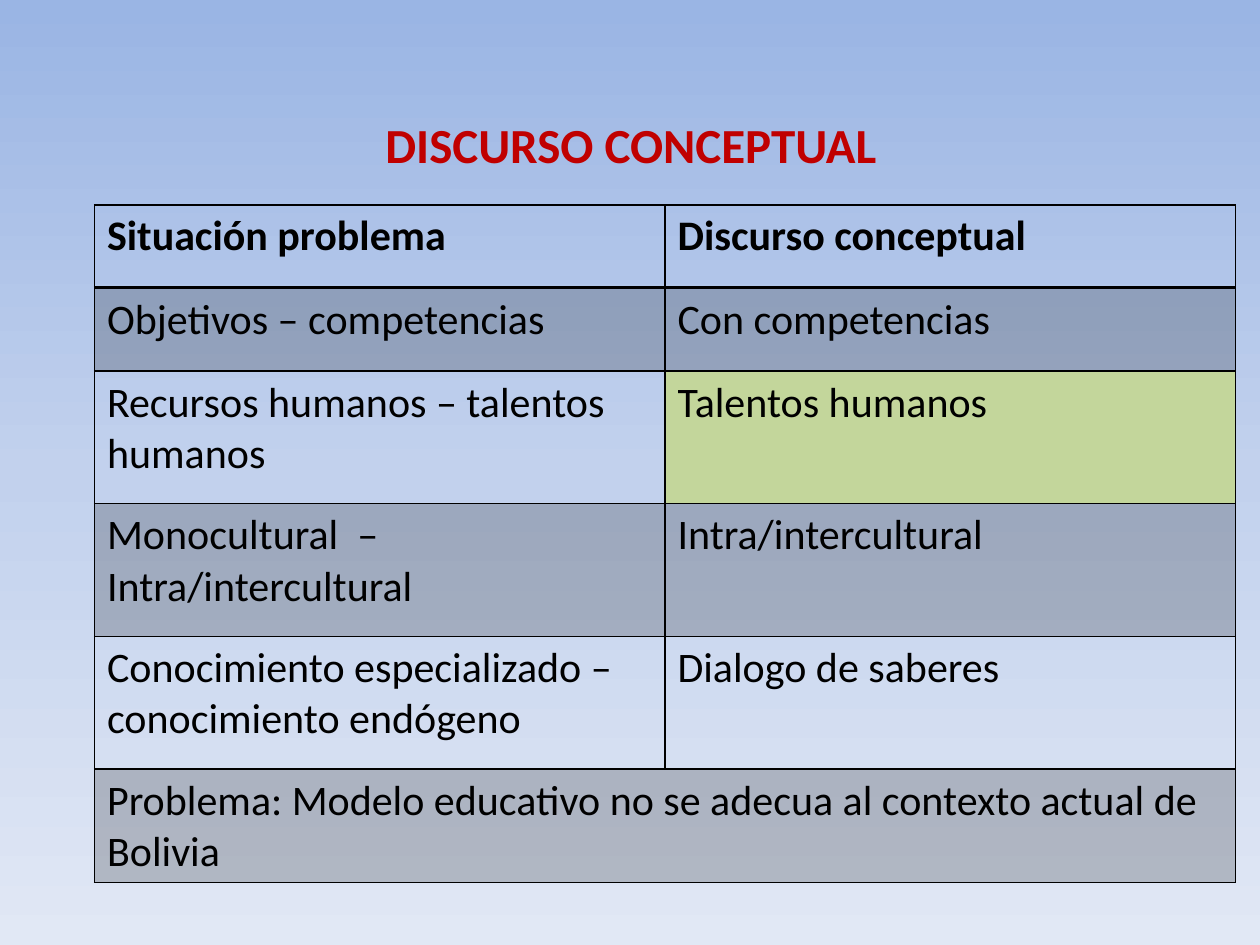
import copy

import pptx
import pptx.dml.color
import pptx.enum.text
import pptx.oxml.ns
import pptx.util
from lxml import etree

Pt = pptx.util.Pt
RGBColor = pptx.dml.color.RGBColor
qn = pptx.oxml.ns.qn

BLACK = RGBColor(0x00, 0x00, 0x00)
RED = RGBColor(0xC0, 0x00, 0x00)
GREEN = RGBColor(0xC3, 0xD6, 0x9B)
SKY = (RGBColor(0x9A, 0xB5, 0xE4), RGBColor(0xC2, 0xD1, 0xED), RGBColor(0xE1, 0xE8, 0xF5))

HEADING = {"name": "Calibri", "size": Pt(28), "bold": True}
HEADER = {"name": "Calibri", "size": Pt(24), "bold": True}
BODY = {**HEADER, "bold": False}

COMPARISON = [
    ("Situación problema", "Discurso conceptual"),
    ("Objetivos – competencias", "Con competencias"),
    ("Recursos humanos – talentos humanos", "Talentos humanos"),
    ("Monocultural  –  Intra/intercultural", "Intra/intercultural"),
    ("Conocimiento especializado – conocimiento endógeno", "Dialogo de saberes"),
    ("Problema: Modelo educativo no se adecua al contexto actual de Bolivia", None),
]
ROW_HEIGHTS = [47.5, 47.5, 75.8, 75.8, 75.8, 47.5]


class SlideBuilder:
    def __init__(self, slide):
        self.slide = slide

    def background(self, colors):
        """Vertical gradient with evenly spaced stops, from top to bottom."""
        fill = self.slide.background.fill
        fill.gradient()
        fill.gradient_angle = 270
        stop_list = self.slide.element.find(".//" + qn("a:gsLst"))
        for _ in range(len(colors) - len(stop_list)):
            stop_list.append(copy.deepcopy(stop_list[-1]))
        for i, (stop, color) in enumerate(zip(fill.gradient_stops, colors)):
            stop.position = i / (len(colors) - 1)
            stop.color.rgb = color

    def add_words(self, frame, words, style, color):
        paragraph = frame.paragraphs[0]
        run = paragraph.add_run()
        run.text = words
        for key, value in style.items():
            setattr(run.font, key, value)
        run.font.color.rgb = color
        return paragraph

    def title(self, words, left, top, width, height):
        box = self.slide.shapes.add_textbox(Pt(left), Pt(top), Pt(width), Pt(height))
        frame = box.text_frame
        frame.word_wrap = True
        frame.vertical_anchor = pptx.enum.text.MSO_ANCHOR.MIDDLE
        heading = self.add_words(frame, words, HEADING, RED)
        heading.alignment = pptx.enum.text.PP_ALIGN.CENTER

    def borders(self, cell, widths):
        properties = cell._tc.get_or_add_tcPr()
        for i, (side, width) in enumerate(widths.items()):
            line = etree.Element(qn("a:ln" + side), w=str(Pt(width)))
            paint = etree.SubElement(line, qn("a:solidFill"))
            etree.SubElement(paint, qn("a:srgbClr"), val=str(BLACK))
            properties.insert(i, line)

    def paint(self, cell, color, opacity=100):
        cell.fill.solid()
        cell.fill.fore_color.rgb = color
        if opacity < 100:
            swatch = cell._tc.tcPr.find(qn("a:solidFill") + "/" + qn("a:srgbClr"))
            etree.SubElement(swatch, qn("a:alpha"), val=str(opacity * 1000))

    def table(self, rows, heights, left, top, width):
        columns = len(rows[0])
        grid = self.slide.shapes.add_table(
            len(rows), columns, Pt(left), Pt(top), Pt(width), Pt(sum(heights))).table
        for column in grid.columns:
            column.width = Pt(width / columns)
        for r, (texts, height) in enumerate(zip(rows, heights)):
            grid.rows[r].height = Pt(height)
            if None in texts:
                grid.cell(r, 0).merge(grid.cell(r, columns - 1))
            for c, words in enumerate(texts):
                cell = grid.cell(r, c)
                # Every second row is shaded
                if r % 2:
                    self.paint(cell, BLACK, 20)
                else:
                    cell.fill.background()
                # The line under the header is thicker
                self.borders(cell, {"L": 1, "R": 1, "T": 2 if r == 1 else 1,
                                    "B": 2 if r == 0 else 1})
                if words:
                    self.add_words(cell.text_frame, words, BODY if r else HEADER, BLACK)
        return grid


def main():
    deck = pptx.Presentation()
    deck.slide_width, deck.slide_height = Pt(720), Pt(540)
    builder = SlideBuilder(deck.slides.add_slide(deck.slide_layouts[6]))

    # Background and heading
    builder.background(SKY)
    builder.title("DISCURSO CONCEPTUAL", 36.5, 37.5, 648, 90)

    # Comparison table with one highlighted answer
    comparison = builder.table(COMPARISON, ROW_HEIGHTS, 54, 117, 652)
    builder.paint(comparison.cell(2, 1), GREEN)

    deck.save("out.pptx")


if __name__ == "__main__":
    main()
